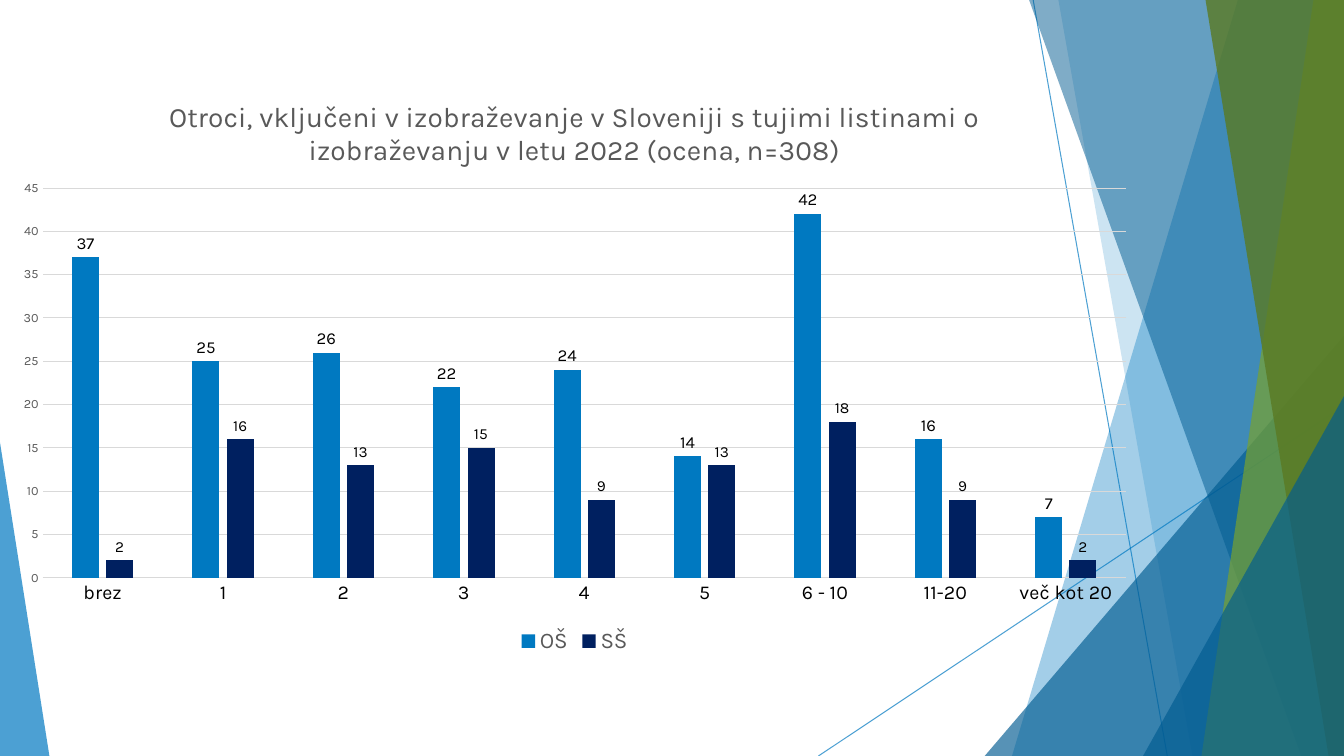
from lxml import etree
from pptx import Presentation
from pptx.chart.data import CategoryChartData
from pptx.dml.color import RGBColor
from pptx.enum.chart import XL_CHART_TYPE, XL_LABEL_POSITION, XL_LEGEND_POSITION, XL_TICK_MARK
from pptx.enum.shapes import MSO_CONNECTOR, MSO_SHAPE
from pptx.oxml import parse_xml
from pptx.oxml.ns import nsdecls, qn
from pptx.util import Pt

CLUSTERED = XL_CHART_TYPE.COLUMN_CLUSTERED
OUTSIDE_END = XL_LABEL_POSITION.OUTSIDE_END
BOTTOM = XL_LEGEND_POSITION.BOTTOM
NO_TICK = XL_TICK_MARK.NONE
STRAIGHT = MSO_CONNECTOR.STRAIGHT
TRIANGLE = MSO_SHAPE.RIGHT_TRIANGLE
APEX_TRIANGLE = MSO_SHAPE.ISOSCELES_TRIANGLE

FONT = "Karla"
WIDTH, HEIGHT = 960, 540
COLORS = {
    "blue": "0079C1", "deep blue": "005B91", "navy": "002060",
    "green": "78A22F", "deep green": "5A7A23",
    "black": "000000", "gray": "595959", "grid": "D9D9D9",
}


def paint(format_, color, opacity=100):
    """Give a fill a solid colour with an opacity in percent."""
    format_.solid()
    format_.fore_color.rgb = RGBColor.from_string(COLORS[color])
    if opacity < 100:
        for node in format_._xPr.iter(qn("a:srgbClr")):
            etree.SubElement(node, qn("a:alpha")).set("val", str(opacity * 1000))


def style_font(font, size, color):
    font.name = FONT
    font.size = Pt(size)
    font.bold = False
    font.color.rgb = RGBColor.from_string(COLORS[color])


deck = Presentation()
deck.slide_width, deck.slide_height = Pt(WIDTH), Pt(HEIGHT)
page = deck.slides.add_slide(deck.slide_layouts[6])

# Thin crossing lines
for ends in [(738, 0, 833.8, HEIGHT), (WIDTH, 290, 584.6, HEIGHT)]:
    line = page.shapes.add_connector(STRAIGHT, *[Pt(value) for value in ends])
    line.line.width = Pt(0.75)
    paint(line.line.fill, "blue", 70)
    etree.SubElement(line._element.spPr, qn("a:effectLst"))

# Facets from back to front: a band is (top x, bottom x), a triangle (left, top, width, apex)
facets = [
    ("band", (884.2, 722.9), "blue", 36),
    ("band", (756, 851.8), "blue", 20),
    ("triangle", (703.4, 239.8, 256.6, 1), "deep blue", 66),
    ("band", (735.1, 929.5), "deep blue", 50),
    ("band", (938.2, 858.2), "green", 70),
    ("band", (861.1, 949), "deep green", 80),
    ("triangle", (816.5, 283, 143.5, 1), "deep blue", 66),
    ("triangle", (0, 316.1, 35.3, 0), "blue", 70),
]
for kind, place, color, opacity in facets:
    if kind == "band":
        top_x, bottom_x = place
        corners = [(WIDTH, 0), (WIDTH, HEIGHT), (bottom_x, HEIGHT)]
        outline = page.shapes.build_freeform(Pt(top_x), 0)
        outline.add_line_segments([(Pt(x), Pt(y)) for x, y in corners], close=True)
        facet = outline.convert_to_shape()
    else:
        left, top, width, apex = place
        facet = page.shapes.add_shape(APEX_TRIANGLE, Pt(left), Pt(top), Pt(width), Pt(HEIGHT - top))
        facet.adjustments[0] = apex
    paint(facet.fill, color, opacity)
    facet.line.fill.background()
    facet.shadow.inherit = False

# Chart
data = CategoryChartData()
data.categories = ["brez", "1", "2", "3", "4", "5", "6 - 10", "11-20", "več kot 20"]
data.add_series("OŠ", [37, 25, 26, 22, 24, 14, 42, 16, 7])
data.add_series("SŠ", [2, 16, 13, 15, 9, 13, 18, 9, 2])
chart = page.shapes.add_chart(CLUSTERED, 0, Pt(54), Pt(820.8), Pt(416.2), data).chart
style_font(chart.font, 10, "black")

chart.has_title = True
title = chart.chart_title
title.include_in_layout = False
title.text_frame.text = ("Otroci, vključeni v izobraževanje v Sloveniji s tujimi listinami o "
                         "izobraževanju v letu 2022 (ocena, n=308)")
style_font(title.text_frame.paragraphs[0].runs[0].font, 20, "gray")

chart.has_legend = True
chart.legend.position = BOTTOM
chart.legend.include_in_layout = False
style_font(chart.legend.font, 16, "gray")

plot = chart.plots[0]
plot.gap_width = 219
plot.overlap = -27
plot.vary_by_categories = False
for series, color, label_size in zip(plot.series, ["blue", "navy"], [12, 11]):
    paint(series.format.fill, color)
    series.invert_if_negative = False
    labels = series.data_labels
    labels.show_value = True
    labels.position = OUTSIDE_END
    style_font(labels.font, label_size, "black")

categories, values = chart.category_axis, chart.value_axis
for axis, size, color in [(categories, 14, "black"), (values, 9, "gray")]:
    axis.major_tick_mark = axis.minor_tick_mark = NO_TICK
    style_font(axis.tick_labels.font, size, color)
values.minimum_scale, values.maximum_scale, values.major_unit = 0, 45, 5
values.format.line.fill.background()
values.has_major_gridlines = True
for line in [categories.format.line, values.major_gridlines.format.line]:
    line.width = Pt(0.75)
    paint(line.fill, "grid")

# Fixed inner plot area, as fractions of the chart
area = chart._chartSpace.chart.plotArea
for layout in area.findall(qn("c:layout")):
    area.remove(layout)
area.insert(0, parse_xml(
    f'<c:layout {nsdecls("c")}><c:manualLayout><c:layoutTarget val="inner"/>'
    '<c:xMode val="edge"/><c:yMode val="edge"/><c:x val="0.037"/><c:y val="0.193"/>'
    '<c:w val="0.943"/><c:h val="0.669"/></c:manualLayout></c:layout>'))

deck.save("out.pptx")
